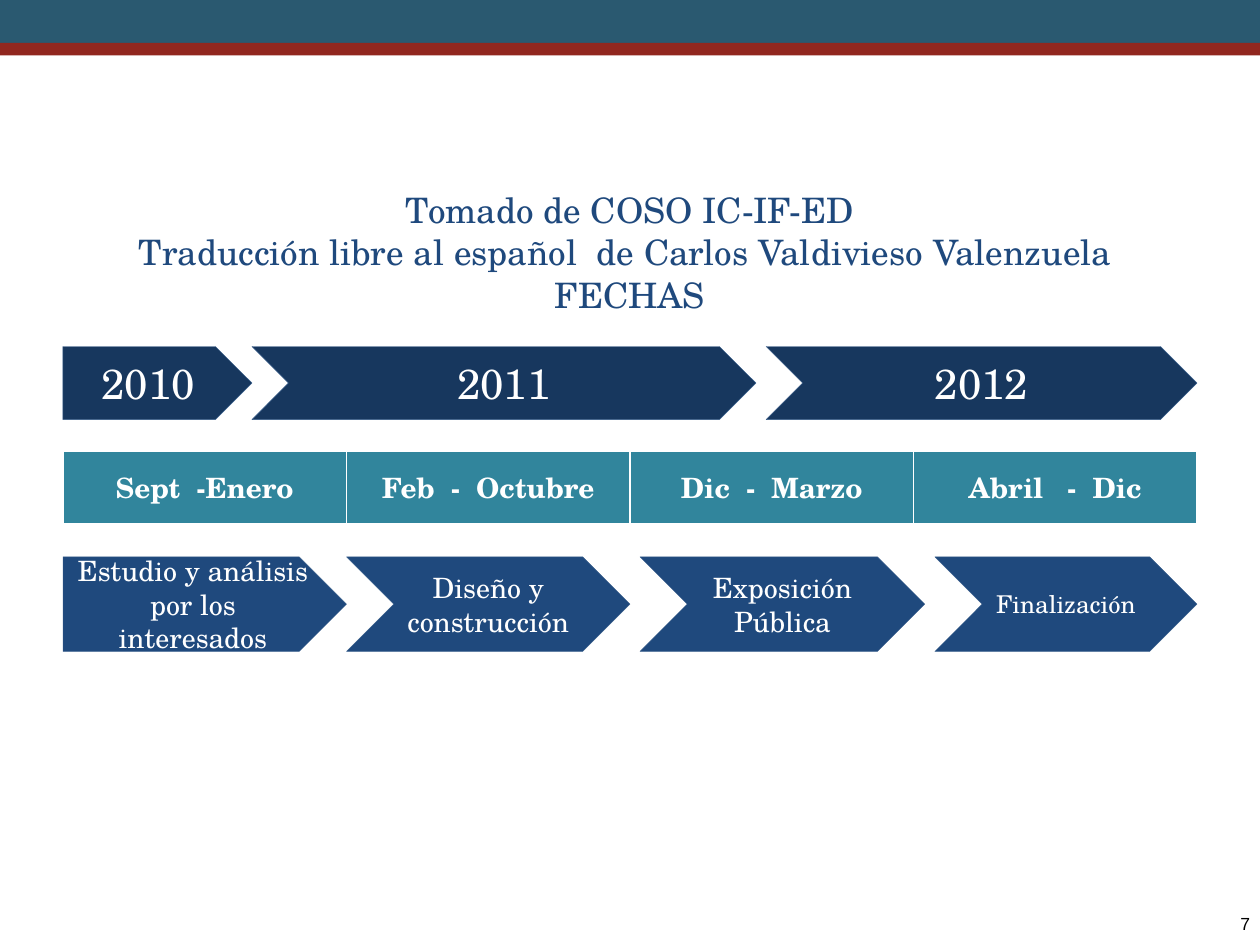
from lxml import etree
from pptx import Presentation
from pptx import util as u
from pptx.dml import color
from pptx.enum import shapes, text
from pptx.oxml import ns

SERIF = "TeX Gyre Schola"
WHITE = "FFFFFF"
NAVY = "17375E"
BLUE = "1F497D"
TEAL = "31859C"
OUTLINE = "3A5F8C"


def rgb(value):
    return color.RGBColor.from_string(value)


def add_run(paragraph, words, size, colour, font=SERIF, bold=False):
    run = paragraph.add_run()
    run.text = words
    run.font.size = u.Pt(size)
    run.font.name = font
    run.font.bold = bold
    run.font.color.rgb = rgb(colour)


def add_block(slide, kind, box, fill, line=None):
    shape = slide.shapes.add_shape(kind, *map(u.Inches, box))
    shape.shadow.inherit = False
    shape.fill.solid()
    shape.fill.fore_color.rgb = rgb(fill)
    if line:
        shape.line.color.rgb = rgb(line)
        shape.line.width = u.Pt(0.25)
    else:
        shape.line.fill.background()
    return shape


def add_header(slide, box):
    left, top, width, height = box
    band = 0.34
    rectangle = shapes.MSO_SHAPE.RECTANGLE
    add_block(slide, rectangle, (left, top, width, band), "2A5970")
    add_block(slide, rectangle, (left, top + band, width, height - band), "91271F")


def add_title(slide, box, lines):
    title = slide.shapes.title
    title.left, title.top, title.width, title.height = map(u.Inches, box)
    frame = title.text_frame
    frame.word_wrap = True
    frame.auto_size = text.MSO_AUTO_SIZE.NONE
    frame.vertical_anchor = text.MSO_ANCHOR.MIDDLE
    paragraph = frame.paragraphs[0]
    paragraph.alignment = text.PP_ALIGN.CENTER
    for index, line in enumerate(lines):
        if index:
            paragraph.add_line_break()
        add_run(paragraph, line, 20, BLUE)


def add_arrow_row(slide, box, fill, arrows):
    left, top, width, height = box
    ends = [start for start, *_ in arrows[1:]] + [width]
    for index, ((start, gap, words, size), end) in enumerate(zip(arrows, ends)):
        kind = shapes.MSO_SHAPE.CHEVRON if index else shapes.MSO_SHAPE.PENTAGON
        shape = add_block(
            slide, kind, (left + start, top, end - gap - start, height), fill, OUTLINE
        )
        frame = shape.text_frame
        frame.word_wrap = True
        frame.vertical_anchor = text.MSO_ANCHOR.MIDDLE
        paragraph = frame.paragraphs[0]
        paragraph.alignment = text.PP_ALIGN.CENTER
        add_run(paragraph, words, size, WHITE)


def set_borders(cell, colour):
    properties = cell._tc.get_or_add_tcPr()
    for index, side in enumerate(("lnL", "lnR", "lnT", "lnB")):
        border = etree.Element(ns.qn(f"a:{side}"), w=str(u.Pt(1)))
        fill = etree.SubElement(border, ns.qn("a:solidFill"))
        etree.SubElement(fill, ns.qn("a:srgbClr"), val=colour)
        properties.insert(index, border)


def add_period_table(slide, box, periods):
    table = slide.shapes.add_table(1, len(periods), *map(u.Inches, box)).table
    for cell, period in zip(table.iter_cells(), periods):
        cell.fill.solid()
        cell.fill.fore_color.rgb = rgb(TEAL)
        set_borders(cell, WHITE)
        cell.vertical_anchor = text.MSO_ANCHOR.MIDDLE
        paragraph = cell.text_frame.paragraphs[0]
        paragraph.alignment = text.PP_ALIGN.CENTER
        add_run(paragraph, period, 16, WHITE, bold=True)


def add_page_number(slide, box, number):
    frame = slide.shapes.add_textbox(*map(u.Inches, box)).text_frame
    frame.word_wrap = True
    frame.margin_left = frame.margin_right = 0
    frame.margin_top = frame.margin_bottom = 0
    paragraph = frame.paragraphs[0]
    paragraph.alignment = text.PP_ALIGN.RIGHT
    add_run(paragraph, number, 10, "000000", font="Arial")


def main():
    presentation = Presentation()
    presentation.slide_width = u.Inches(10)
    presentation.slide_height = u.Inches(7.5)
    slide = presentation.slides.add_slide(presentation.slide_layouts[5])

    add_header(slide, (0, 0, 10, 0.44))
    add_page_number(slide, (8.25, 7.25, 1.67, 0.17), "7")
    add_title(slide, (0.5, 1.25, 9, 1.5), [
        "Tomado de COSO IC-IF-ED",
        "Traducción libre al español  de Carlos Valdivieso Valenzuela ",
        "FECHAS",
    ])
    add_period_table(
        slide, (0.5, 3.58, 9, 0.58),
        ["Sept  -Enero", "Feb  -  Octubre", "Dic  -  Marzo", "Abril   -  Dic"],
    )
    add_arrow_row(slide, (0.5, 4.42, 9, 0.75), BLUE, [
        (0, 0, "Estudio y análisis por los interesados", 16),
        (2.25, 0.08, "Diseño y construcción", 16),
        (4.58, 0.08, "Exposición Pública", 16),
        (6.92, 0, "Finalización", 14),
    ])
    add_arrow_row(slide, (0.5, 2.75, 9, 0.58), NAVY, [
        (0, 0, "2010", 24),
        (1.5, 0.08, "2011", 24),
        (5.58, 0, "2012", 24),
    ])
    presentation.save("out.pptx")


if __name__ == "__main__":
    main()
